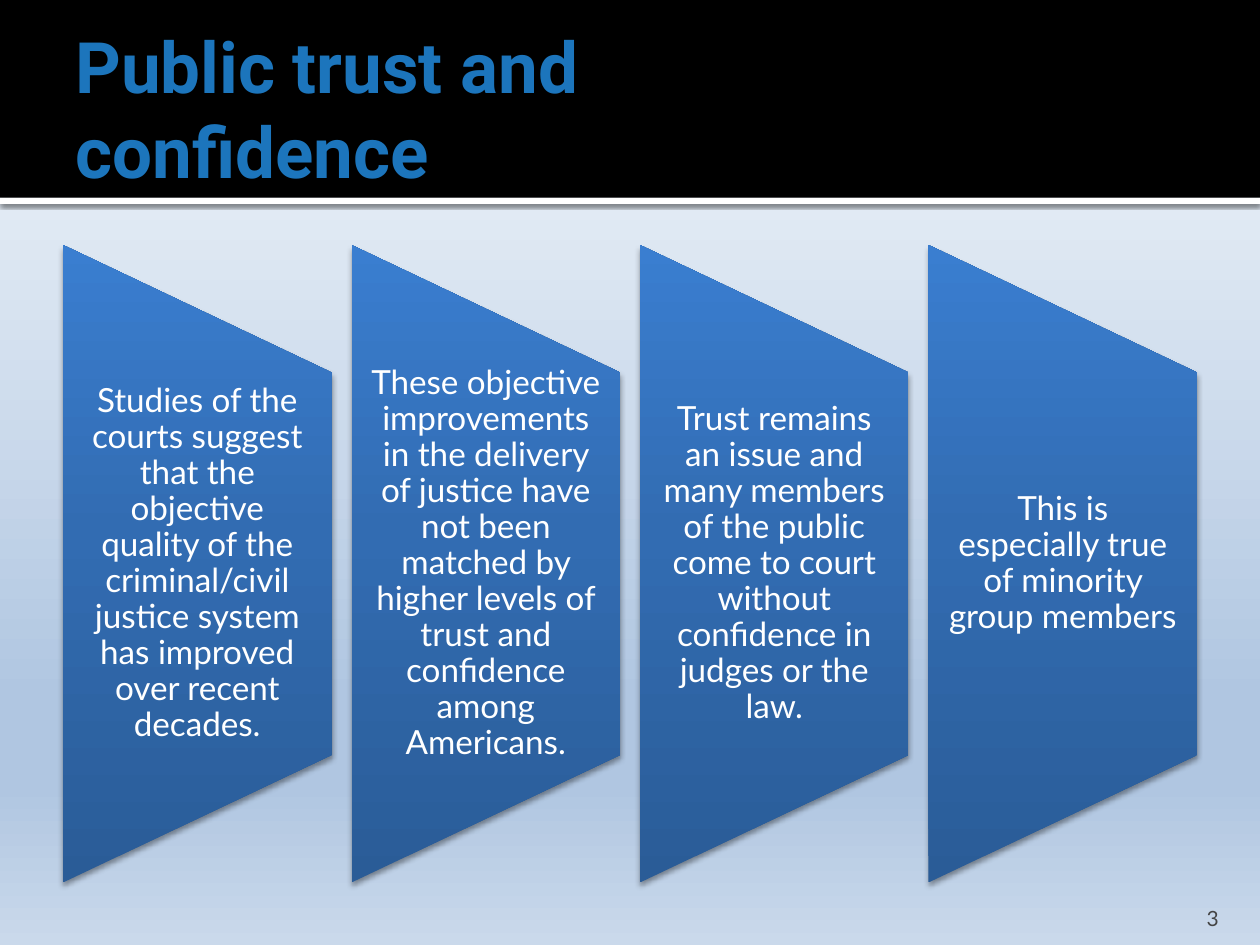
"""Build the slide on public trust and confidence in the courts."""
from dataclasses import dataclass

from lxml import etree
from pptx import Presentation
from pptx import util as u
from pptx.dml.color import RGBColor
from pptx.enum import shapes, text
from pptx.oxml.ns import qn


@dataclass(frozen=True)
class Theme:
    """Colours, fonts and type sizes."""
    title: str = "1C75BC"
    band: str = "000000"
    light: str = "FFFFFF"
    number: str = "454545"
    shadow: str = "000000"
    sky: tuple = ((0, "F6F9FC"), (74, "B0C6E1"), (83, "B0C6E1"), (100, "CAD9EB"))
    panel: tuple = ((0, "2A5C97"), (55, "326CB2"), (100, "3A7ED0"))
    head_font: str = "Roboto"
    body_font: str = "Lato"
    title_size: float = 40.5
    body_size: float = 19
    number_size: float = 12


@dataclass(frozen=True)
class Box:
    """A rectangle in points."""
    left: float
    top: float
    width: float
    height: float

    def lengths(self) -> list:
        """Return the four lengths as Pt."""
        return [u.Pt(v) for v in (self.left, self.top, self.width, self.height)]


@dataclass(frozen=True)
class Shadow:
    """A shadow that falls straight down."""
    opacity: int
    blur: float
    distance: float


@dataclass(frozen=True)
class Label:
    """A text with its look and its insets in points."""
    wording: str
    font: str
    size: float
    color: str
    insets: tuple
    align: text.PP_ALIGN
    anchor: text.MSO_ANCHOR = text.MSO_ANCHOR.MIDDLE
    bold: bool = False
    spacing: float = 1.0


THEME = Theme()
PANEL_TEXTS = (
    "Studies of the courts suggest that the objective quality of the "
    "criminal/civil justice system has improved over recent decades.",
    "These objective improvements in the delivery of justice have not been "
    "matched by higher levels of trust and confidence among Americans.",
    "Trust remains an issue and many members of the public come to court "
    "without confidence in judges or the law.",
    "This is especially true of minority group members",
)
PANEL_LEFT, PANEL_STEP = 36, 164.85
PANEL_WIDTH, PANEL_HEIGHT, PANEL_MIDDLE = 153.5, 364.25, 322.15
WORDS_HEIGHT = 218.6


def set_gradient(fill, owner, stops: tuple, angle: int) -> None:
    """Fill with a linear gradient that stays upright when its owner turns."""
    fill.gradient()
    gradient = next(owner.iter(qn("a:gradFill")))
    gradient.set("rotWithShape", "0")
    gradient.find(qn("a:lin")).set("ang", str(angle * 60000))
    stop_list = gradient.find(qn("a:gsLst"))
    for old_stop in list(stop_list):
        stop_list.remove(old_stop)
    for position, color in stops:
        stop = etree.SubElement(stop_list, qn("a:gs"), pos=str(position * 1000))
        etree.SubElement(stop, qn("a:srgbClr"), val=color)


def set_shadow(shape, shadow: Shadow) -> None:
    """Drop a shadow below the shape."""
    effects = shape.element.spPr.find(qn("a:effectLst"))
    outer = etree.SubElement(
        effects, qn("a:outerShdw"), blurRad=str(u.Pt(shadow.blur)),
        dist=str(u.Pt(shadow.distance)), dir="5400000", rotWithShape="0")
    color = etree.SubElement(outer, qn("a:srgbClr"), val=THEME.shadow)
    etree.SubElement(color, qn("a:alpha"), val=str(shadow.opacity * 1000))


def add_plain(slide, kind: shapes.MSO_SHAPE, box: Box):
    """Add a preset shape without line or shadow."""
    shape = slide.shapes.add_shape(kind, *box.lengths())
    shape.shadow.inherit = False
    shape.line.fill.background()
    return shape


def add_band(slide, box: Box, color: str):
    """Add a solid band."""
    band = add_plain(slide, shapes.MSO_SHAPE.RECTANGLE, box)
    band.fill.solid()
    band.fill.fore_color.rgb = RGBColor.from_string(color)
    return band


def add_label(slide, box: Box, label: Label) -> None:
    """Add a wrapped text box."""
    frame = slide.shapes.add_textbox(*box.lengths()).text_frame
    frame.word_wrap = True
    frame.vertical_anchor = label.anchor
    (frame.margin_left, frame.margin_top,
     frame.margin_right, frame.margin_bottom) = map(u.Pt, label.insets)
    paragraph = frame.paragraphs[0]
    paragraph.text = label.wording
    paragraph.alignment = label.align
    paragraph.line_spacing = label.spacing
    paragraph.font.name = label.font
    paragraph.font.size = u.Pt(label.size)
    paragraph.font.bold = label.bold
    paragraph.font.color.rgb = RGBColor.from_string(label.color)


def add_panel(slide, left: float, wording: str) -> None:
    """Add a panel on its side with its upright words."""
    center = left + PANEL_WIDTH / 2
    panel = add_plain(
        slide, shapes.MSO_SHAPE.FLOWCHART_MANUAL_OPERATION,
        Box(center - PANEL_HEIGHT / 2, PANEL_MIDDLE - PANEL_WIDTH / 2,
            PANEL_HEIGHT, PANEL_WIDTH))
    panel.rotation = 270
    set_gradient(panel.fill, panel.element.spPr, THEME.panel, 270)
    set_shadow(panel, Shadow(38, 3.1, 2))
    add_label(
        slide,
        Box(left, PANEL_MIDDLE - WORDS_HEIGHT / 2, PANEL_WIDTH, WORDS_HEIGHT),
        Label(wording, THEME.body_font, THEME.body_size, THEME.light,
              (9.5, 0, 9.5, 0), text.PP_ALIGN.CENTER, spacing=0.9))


def main() -> None:
    """Build and save the slide."""
    deck = Presentation()
    deck.slide_width, deck.slide_height = u.Pt(720), u.Pt(540)
    slide = deck.slides.add_slide(deck.slide_layouts[6])
    set_gradient(slide.background.fill, slide.element, THEME.sky, 90)

    rule = add_band(slide, Box(0, 113, 720, 3.6), THEME.light)
    set_shadow(rule, Shadow(60, 2.5, 0.8))
    add_band(slide, Box(0, 0, 720, 113), THEME.band)
    add_label(
        slide, Box(36, 12.25, 474, 98.5),
        Label("Public trust and confidence", THEME.head_font, THEME.title_size,
              THEME.title, (7.2, 3.6, 3.6, 3.6), text.PP_ALIGN.LEFT, bold=True))

    for index, wording in enumerate(PANEL_TEXTS):
        add_panel(slide, PANEL_LEFT + index * PANEL_STEP, wording)

    add_label(
        slide, Box(646, 510, 57.6, 21.6),
        Label("3", THEME.body_font, THEME.number_size, THEME.number,
              (7.2, 3.6, 7.2, 0), text.PP_ALIGN.RIGHT, text.MSO_ANCHOR.BOTTOM))
    deck.save("out.pptx")


if __name__ == "__main__":
    main()
